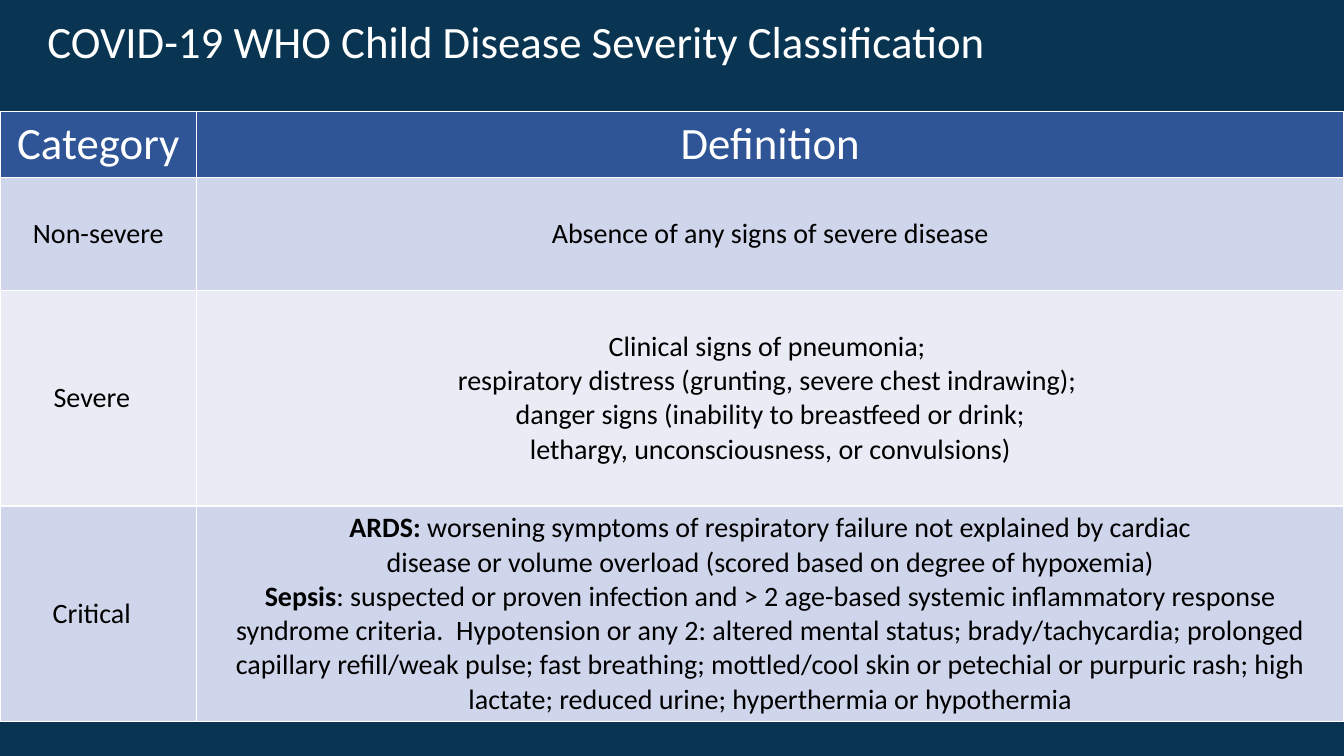
from lxml import etree
from pptx import Presentation
from pptx.dml.color import RGBColor
from pptx.enum.shapes import MSO_SHAPE
from pptx.enum.text import MSO_ANCHOR, MSO_AUTO_SIZE, PP_ALIGN
from pptx.oxml.ns import qn
from pptx.util import Inches, Pt

RECTANGLE = MSO_SHAPE.RECTANGLE
TOP, MIDDLE = MSO_ANCHOR.TOP, MSO_ANCHOR.MIDDLE
NO_AUTOFIT = MSO_AUTO_SIZE.NONE
LEFT, CENTER = PP_ALIGN.LEFT, PP_ALIGN.CENTER

TITLE_ONLY = 5
FONT = "Calibri"
COLORS = {
    "navy": "093552",
    "header": "2F5597",
    "band_dark": "CFD5EA",
    "band_light": "E9EBF5",
    "white": "FFFFFF",
    "black": "000000",
}
COLUMN_WIDTHS = [1.95, 11.38]
ROW_HEIGHTS = [0.65, 1.12, 2.14, 2.14]
ROW_FILLS = ["header", "band_dark", "band_light", "band_dark"]
CATEGORIES = ["Category", "Non-severe", "Severe", "Critical"]
CATEGORY_RIGHT_MARGINS = [0.1, 0.1, 0.23, 0.23]
DEFINITIONS = [
    [[("Definition", False)]],
    [[("Absence of any signs of severe disease", False)]],
    [
        [("Clinical signs of pneumonia; ", False)],
        [("respiratory distress (grunting, severe chest indrawing); ", False)],
        [("danger signs (inability to breastfeed or drink;", False)],
        [(" lethargy, unconsciousness, or convulsions) ", False)],
    ],
    [
        [
            ("ARDS: ", True),
            ("worsening symptoms of respiratory failure not explained by cardiac", False),
        ],
        [("disease or volume overload (scored based on degree of hypoxemia)", False)],
        [
            ("Sepsis", True),
            (
                ": suspected or proven infection and > 2 age-based systemic "
                "inflammatory response syndrome criteria.  Hypotension or any 2: "
                "altered mental status; brady/tachycardia; prolonged capillary "
                "refill/weak pulse; fast breathing; mottled/cool skin or petechial "
                "or purpuric rash; high lactate; reduced urine; hyperthermia or "
                "hypothermia",
                False,
            ),
        ],
    ],
]


def rgb(name):
    """Return the named palette colour."""
    return RGBColor.from_string(COLORS[name])


def write_text(text_frame, paragraphs, size=20, color="black", align=CENTER, spacing=1.0):
    """Write paragraphs given as lists of (text, bold) runs."""
    for index, runs in enumerate(paragraphs):
        paragraph = text_frame.paragraphs[0] if index == 0 else text_frame.add_paragraph()
        paragraph.alignment = align
        paragraph.line_spacing = spacing
        for text, bold in runs:
            run = paragraph.add_run()
            run.text = text
            run.font.name = FONT
            run.font.size = Pt(size)
            run.font.bold = bold
            run.font.color.rgb = rgb(color)


def add_band(slide, top, height):
    """Add a full-width navy band."""
    band = slide.shapes.add_shape(
        RECTANGLE, Inches(0), Inches(top), Inches(13.33), Inches(height)
    )
    band.shadow.inherit = False
    band.fill.solid()
    band.fill.fore_color.rgb = rgb("navy")
    band.line.fill.background()


def set_title(slide, text):
    """Place and format the slide title."""
    title = slide.shapes.title
    title.left, title.top = Inches(0.37), Inches(0.15)
    title.width, title.height = Inches(12.04), Inches(0.8)
    title.text_frame.auto_size = NO_AUTOFIT
    title.text_frame.vertical_anchor = TOP
    write_text(
        title.text_frame, [[(text, False)]], size=32, color="white", align=LEFT, spacing=0.9
    )


def add_borders(cell):
    """Draw thin white borders around a cell."""
    properties = cell._tc.get_or_add_tcPr()
    for side in ("lnL", "lnR", "lnT", "lnB"):
        line = etree.SubElement(properties, qn(f"a:{side}"), w=str(Pt(1)))
        fill = etree.SubElement(line, qn("a:solidFill"))
        etree.SubElement(fill, qn("a:srgbClr"), val=COLORS["white"])


def fill_cell(cell, paragraphs, fill, right_margin=0.1):
    """Format one table cell and write its text."""
    add_borders(cell)
    cell.fill.solid()
    cell.fill.fore_color.rgb = rgb(fill)
    cell.vertical_anchor = MIDDLE
    cell.margin_right = Inches(right_margin)
    is_header = fill == "header"
    write_text(
        cell.text_frame,
        paragraphs,
        size=32 if is_header else 20,
        color="white" if is_header else "black",
    )


def add_severity_table(slide):
    """Add the table of severity categories and definitions."""
    table = slide.shapes.add_table(
        len(ROW_HEIGHTS),
        len(COLUMN_WIDTHS),
        Inches(0),
        Inches(1.11),
        Inches(sum(COLUMN_WIDTHS)),
        Inches(sum(ROW_HEIGHTS)),
    ).table
    for column, width in zip(table.columns, COLUMN_WIDTHS):
        column.width = Inches(width)
    for index, height in enumerate(ROW_HEIGHTS):
        table.rows[index].height = Inches(height)
        fill = ROW_FILLS[index]
        category = [[(CATEGORIES[index], False)]]
        fill_cell(table.cell(index, 0), category, fill, CATEGORY_RIGHT_MARGINS[index])
        fill_cell(table.cell(index, 1), DEFINITIONS[index], fill)


def main():
    """Build and save the severity classification slide."""
    presentation = Presentation()
    presentation.slide_width = Inches(13.33)
    presentation.slide_height = Inches(7.5)
    slide = presentation.slides.add_slide(presentation.slide_layouts[TITLE_ONLY])
    add_band(slide, 0, 1.18)
    add_band(slide, 6.97, 0.53)
    title_element = slide.shapes.title.element
    title_element.getparent().append(title_element)
    set_title(slide, "COVID-19 WHO Child Disease Severity Classification")
    add_severity_table(slide)
    presentation.save("out.pptx")


if __name__ == "__main__":
    main()
